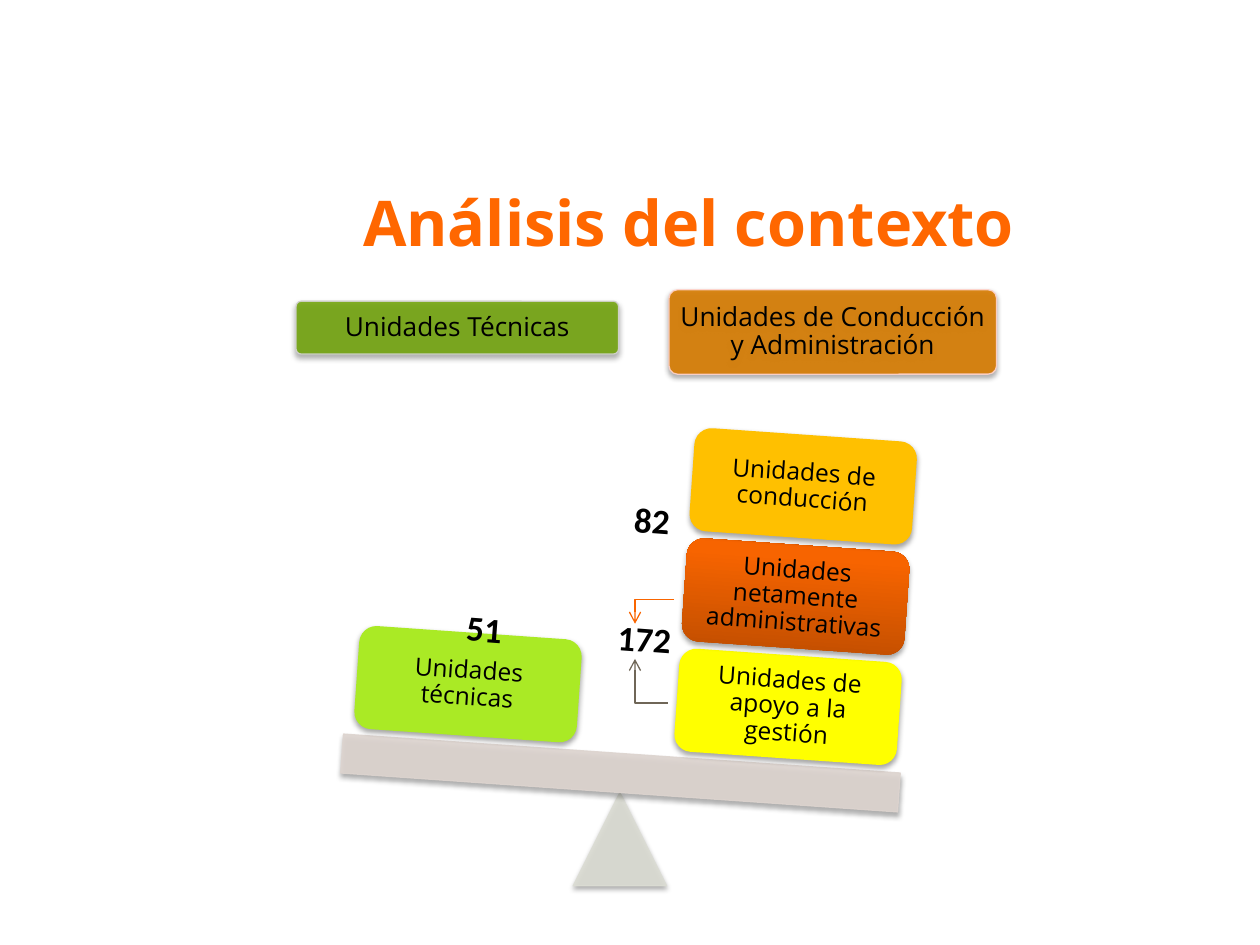
from dataclasses import dataclass

from lxml.etree import SubElement
from pptx import Presentation
from pptx.dml.color import RGBColor
from pptx.enum.shapes import MSO_CONNECTOR, MSO_SHAPE
from pptx.enum.text import MSO_ANCHOR, PP_ALIGN
from pptx.oxml.ns import qn
from pptx.util import Inches, Pt

TILT = 4
CARD_WIDTH, CARD_HEIGHT = 1.77, 0.82
BLACK = "000000"


@dataclass
class Block:
    kind: MSO_SHAPE
    left: float
    top: float
    width: float
    height: float
    fill: str | tuple[str, str]
    text: str = ""
    size: int = 14
    rotation: float = 0
    line: str | None = None
    opacity: int = 100
    corner: float | None = None


@dataclass
class Count:
    text: str
    left: float
    top: float
    width: float


@dataclass
class Arrow:
    start: tuple[float, float]
    end: tuple[float, float]
    color: str


def rgb(value: str) -> RGBColor:
    return RGBColor.from_string(value)


def style_text(para, size: int, color: str, font: str, bold: bool = False) -> None:
    para.alignment = PP_ALIGN.CENTER
    para.font.size = Pt(size)
    para.font.name = font
    para.font.bold = bold
    para.font.color.rgb = rgb(color)


def set_opacity(shape, percent: int) -> None:
    for color in shape._element.spPr.iter(qn("a:srgbClr")):
        SubElement(color, qn("a:alpha"), val=str(percent * 1000))


def add_shadow(shape) -> None:
    shape.shadow.inherit = False
    effects = shape._element.spPr.find(qn("a:effectLst"))
    shadow = SubElement(effects, qn("a:outerShdw"), blurRad=str(Pt(3.1)),
                        dist=str(Pt(1.8)), dir="5400000", rotWithShape="0")
    color = SubElement(shadow, qn("a:srgbClr"), val=BLACK)
    SubElement(color, qn("a:alpha"), val="35000")


def draw_block(page, block: Block) -> None:
    shape = page.shapes.add_shape(block.kind, Inches(block.left), Inches(block.top),
                                  Inches(block.width), Inches(block.height))
    shape.rotation = block.rotation
    if block.corner is not None:
        shape.adjustments[0] = block.corner
    if isinstance(block.fill, tuple):
        shape.fill.gradient()
        shape.fill.gradient_angle = 90
        for stop, color, position in zip(shape.fill.gradient_stops, block.fill, (0, 0.8)):
            stop.color.rgb = rgb(color)
            stop.position = position
    else:
        shape.fill.solid()
        shape.fill.fore_color.rgb = rgb(block.fill)
    if block.line:
        shape.line.color.rgb = rgb(block.line)
        shape.line.width = Pt(0.75)
    else:
        shape.line.fill.background()
    if block.opacity < 100:
        set_opacity(shape, block.opacity)
    add_shadow(shape)
    if block.text:
        frame = shape.text_frame
        frame.word_wrap = True
        frame.vertical_anchor = MSO_ANCHOR.MIDDLE
        frame.margin_left = frame.margin_right = Inches(0.06)
        frame.margin_top = frame.margin_bottom = Inches(0.06)
        para = frame.paragraphs[0]
        para.text = block.text
        para.line_spacing = 0.9
        style_text(para, block.size, BLACK, "Open Sans")


def draw_count(page, count: Count) -> None:
    box = page.shapes.add_textbox(Inches(count.left), Inches(count.top),
                                  Inches(count.width), Inches(0.44))
    box.rotation = 4.3
    box.text_frame.word_wrap = False
    para = box.text_frame.paragraphs[0]
    para.text = count.text
    style_text(para, 20, BLACK, "Calibri", bold=True)


def draw_arrow(page, arrow: Arrow) -> None:
    """Draw a one-bend arrow that leaves sideways and arrives vertically."""
    points = [Inches(value) for value in (*arrow.start, *arrow.end)]
    connector = page.shapes.add_connector(MSO_CONNECTOR.ELBOW, *points)
    connector.line.color.rgb = rgb(arrow.color)
    connector.line.width = Pt(0.75)
    properties = connector._element.spPr
    properties.find(qn("a:prstGeom")).set("prst", "bentConnector2")
    SubElement(properties.find(qn("a:ln")), qn("a:tailEnd"), type="arrow")
    SubElement(properties, qn("a:effectLst"))


def draw_title(page, text: str) -> None:
    title = page.shapes.title
    title.left, title.top = Inches(1.77), Inches(1.48)
    title.width, title.height = Inches(7.39), Inches(0.55)
    title.text_frame.vertical_anchor = MSO_ANCHOR.MIDDLE
    para = title.text_frame.paragraphs[0]
    para.text = text
    style_text(para, 36, "FF6700", "Open Sans", bold=True)


def card(left: float, top: float, text: str, fill: str | tuple[str, str]) -> Block:
    return Block(MSO_SHAPE.ROUNDED_RECTANGLE, left, top, CARD_WIDTH, CARD_HEIGHT,
                 fill, text, rotation=TILT)


def header(left: float, top: float, width: float, height: float,
           text: str, fill: str, line: str) -> Block:
    return Block(MSO_SHAPE.ROUNDED_RECTANGLE, left, top, width, height, fill, text,
                 size=15, line=line, opacity=90, corner=0.1)


HEADERS = [
    header(2.35, 2.39, 2.56, 0.42, "Unidades Técnicas", "74A510", "D5D4D2"),
    header(5.31, 2.3, 2.6, 0.67, "Unidades de Conducción y Administración",
           "D77C01", "FFD3CC"),
]
SCALE = [
    Block(MSO_SHAPE.ISOSCELES_TRIANGLE, 4.55, 6.29, 0.74, 0.74, "DBDCD3",
          line="DBDCD3", opacity=90),
    Block(MSO_SHAPE.RECTANGLE, 2.71, 5.98, 4.43, 0.31, "DDD4CF",
          rotation=TILT, line="DDD4CF", opacity=90),
]
# The right-hand stack, from the beam upwards
STACK = [
    ("Unidades de apoyo a la gestión", "FFFF00"),
    ("Unidades netamente administrativas", ("BE4D00", "F76400")),
    ("Unidades de conducción", "FFC000"),
]
CARDS = [card(5.37 + 0.06 * level, 5.2 - 0.875 * level, text, fill)
         for level, (text, fill) in enumerate(STACK)]
CARDS.append(card(2.83, 5.02, "Unidades técnicas", "AAEA25"))
COUNTS = [Count("82", 4.92, 3.91, 0.51), Count("51", 3.59, 4.77, 0.51),
          Count("172", 4.78, 4.85, 0.67)]
ARROWS = [Arrow((5.35, 4.76), (5.04, 4.95), "F96500"),
          Arrow((5.3, 5.58), (5.04, 5.23), "6F6657")]


def main() -> None:
    deck = Presentation()
    deck.slide_width, deck.slide_height = Inches(10), Inches(7.5)
    page = deck.slides.add_slide(deck.slide_layouts[5])
    draw_title(page, "Análisis del contexto")
    for block in HEADERS + SCALE + CARDS:
        draw_block(page, block)
    for count in COUNTS:
        draw_count(page, count)
    for arrow in ARROWS:
        draw_arrow(page, arrow)
    deck.save("out.pptx")


if __name__ == "__main__":
    main()
